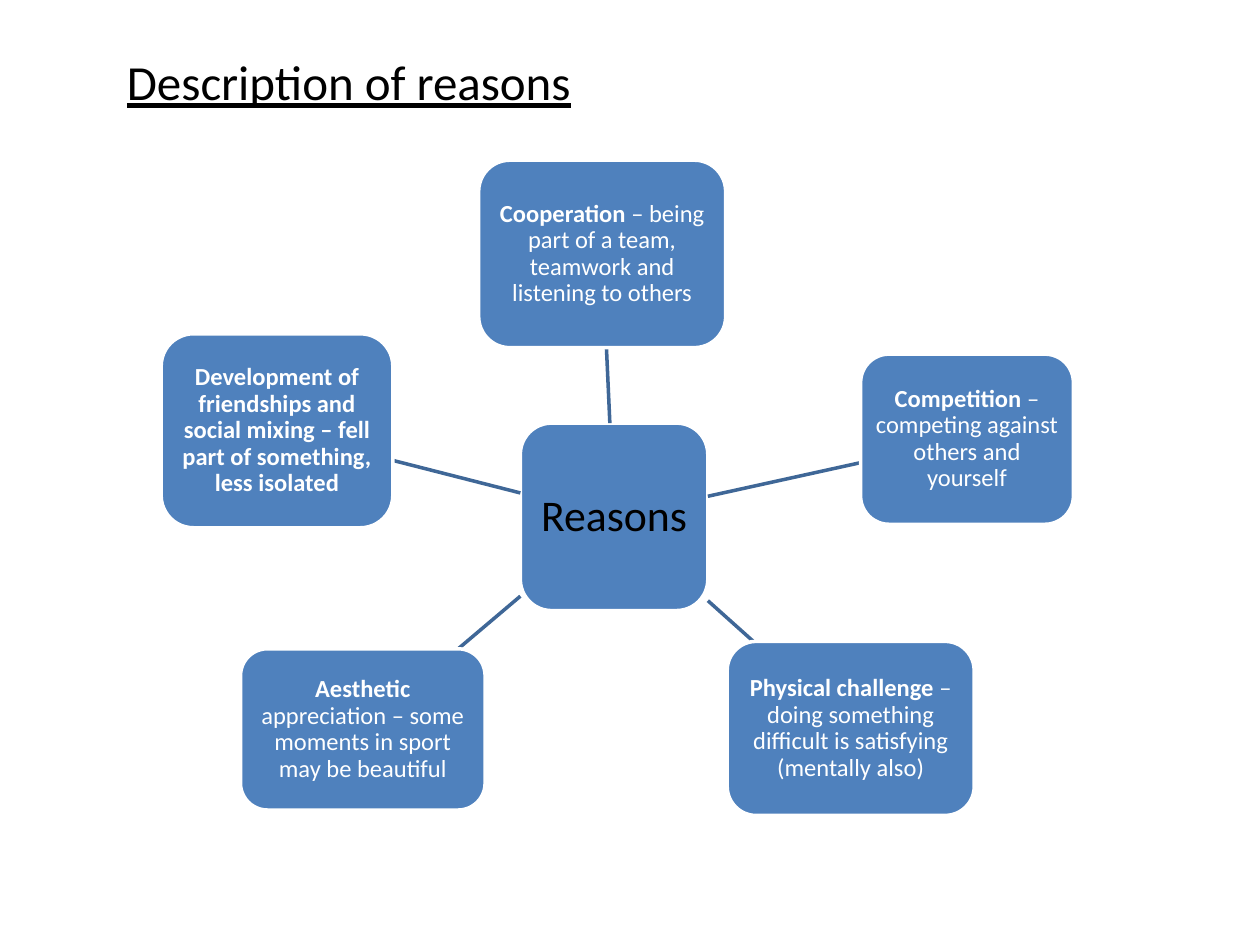
from dataclasses import dataclass

from lxml.etree import SubElement
from pptx import Presentation
from pptx.dml.color import RGBColor
from pptx.enum.shapes import MSO_CONNECTOR as Connector, MSO_SHAPE as Shape
from pptx.enum.text import MSO_ANCHOR as Anchor, PP_ALIGN as Align
from pptx.oxml.ns import qn
from pptx.util import Cm, Pt

BLUE, DARK_BLUE, WHITE, BLACK = "4F81BD", "3F6797", "FFFFFF", "000000"


@dataclass
class Node:
    """A rounded box, measured in centimetres."""
    left: float
    top: float
    width: float
    height: float
    bold: str = ""
    plain: str = ""
    size: int = 14
    color: str = WHITE
    inset: float = 0.1

    @property
    def center(self) -> tuple[float, float]:
        return self.left + self.width / 2, self.top + self.height / 2

    def edge_towards(self, other: "Node") -> tuple[float, float]:
        """Point where the line to the other node's centre leaves this box."""
        x, y = self.center
        dx, dy = other.center[0] - x, other.center[1] - y
        share = 1 / max(2 * abs(dx) / self.width, 2 * abs(dy) / self.height)
        return x + dx * share, y + dy * share


HUB = Node(10.49, 8.53, 3.78, 3.78, plain="Reasons", size=25, color=BLACK, inset=0.18)
REASONS = [
    Node(9.65, 3.23, 4.98, 3.78, "Cooperation",
         " – being part of a team, teamwork and listening to others"),
    Node(17.35, 7.14, 4.29, 3.43, "Competition",
         " – competing against others and yourself"),
    Node(14.66, 12.93, 4.98, 3.51, "Physical challenge ",
         "– doing something difficult is satisfying (mentally also)"),
    Node(4.85, 13.08, 4.93, 3.25, "Aesthetic ",
         "appreciation – some moments in sport may be beautiful"),
    Node(3.25, 6.73, 4.67, 3.91,
         "Development of friendships and social mixing – fell part of something, less isolated"),
]


def rgb(color: str) -> RGBColor:
    return RGBColor.from_string(color)


def apply(target, values: dict) -> None:
    for name, value in values.items():
        setattr(target, name, value)


def add_span(para, text: str, color: str, **values) -> None:
    span = para.add_run()
    span.text = text
    apply(span.font, {"name": "Calibri", **values})
    span.font.color.rgb = rgb(color)


def set_line(line, color: str) -> None:
    line.color.rgb = rgb(color)
    line.width = Pt(2)


def draw_node(page, node: Node) -> None:
    box = page.shapes.add_shape(Shape.ROUNDED_RECTANGLE, Cm(node.left), Cm(node.top),
                                Cm(node.width), Cm(node.height))
    box.shadow.inherit = False
    box.fill.solid()
    box.fill.fore_color.rgb = rgb(BLUE)
    set_line(box.line, WHITE)
    frame = box.text_frame
    sides = ("left", "top", "right", "bottom")
    apply(frame, {f"margin_{side}": Cm(node.inset) for side in sides})
    apply(frame, {"word_wrap": True, "vertical_anchor": Anchor.MIDDLE})
    para = frame.paragraphs[0]
    apply(para, {"alignment": Align.CENTER, "line_spacing": 0.9})
    for text, bold in ((node.bold, True), (node.plain, False)):
        if text:
            add_span(para, text, node.color, size=Pt(node.size), bold=bold)


def draw_link(page, start: Node, end: Node) -> None:
    points = (*start.edge_towards(end), *end.edge_towards(start))
    link = page.shapes.add_connector(Connector.STRAIGHT, *map(Cm, points))
    set_line(link.line, DARK_BLUE)
    SubElement(link._element.spPr, qn("a:effectLst"))


def draw_title(page, text: str) -> None:
    box = page.shapes.add_textbox(Cm(2.31), Cm(0.91), Cm(19.99), Cm(1.45))
    box.text_frame.word_wrap = True
    add_span(box.text_frame.paragraphs[0], text, BLACK, size=Pt(28), underline=True)


def main() -> None:
    deck = Presentation()
    apply(deck, {"slide_width": Cm(25.4), "slide_height": Cm(19.05)})
    page = deck.slides.add_slide(deck.slide_layouts[6])

    # Heading
    draw_title(page, "Description of reasons")

    # Hub with its reasons around it
    draw_node(page, HUB)
    for reason in REASONS:
        draw_link(page, HUB, reason)
        draw_node(page, reason)

    deck.save("out.pptx")


if __name__ == "__main__":
    main()
